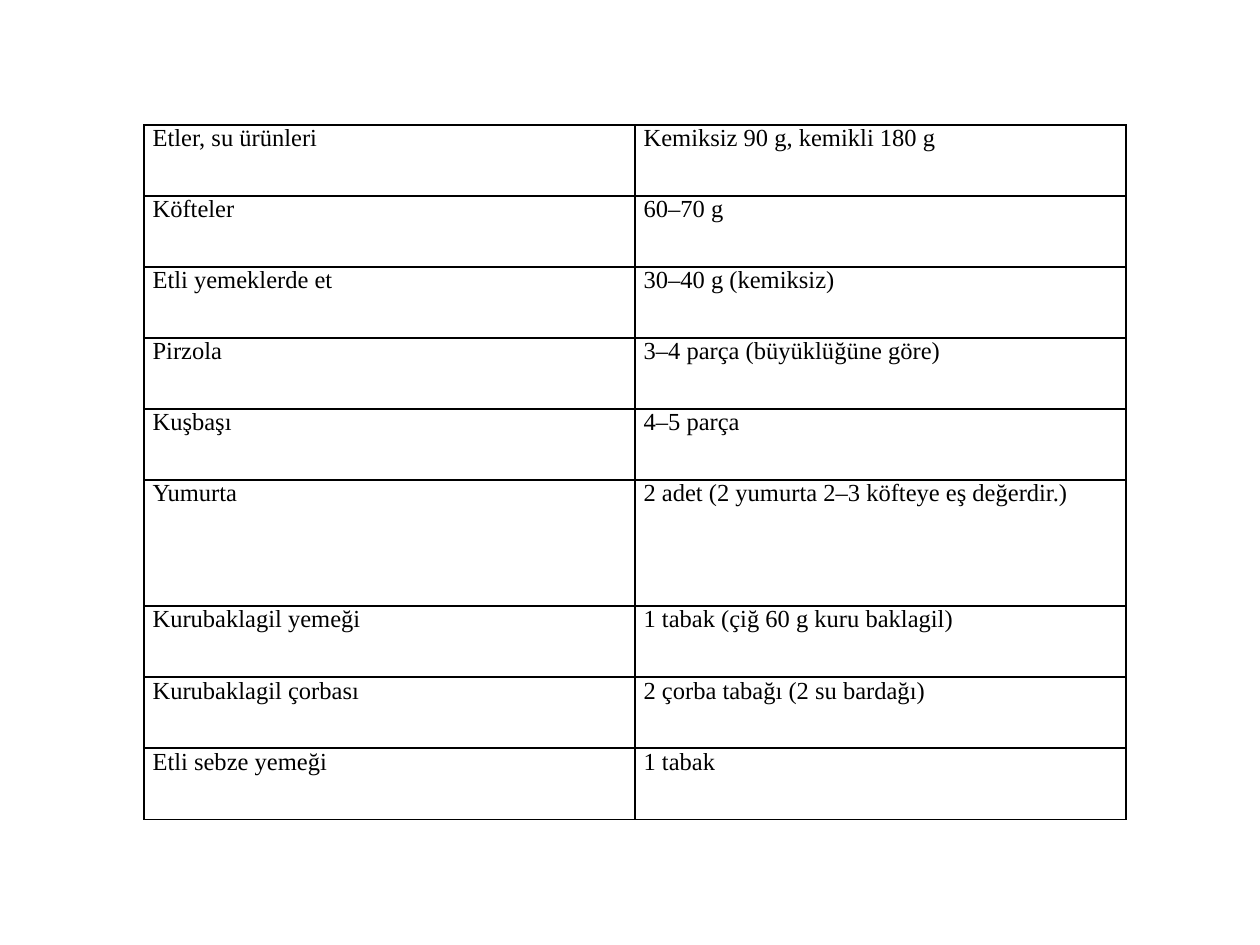
import pptx
import pptx.dml.color
import pptx.oxml
import pptx.oxml.ns
import pptx.util

Pt = pptx.util.Pt
BLACK = pptx.dml.color.RGBColor(0, 0, 0)
FONT_NAME = "Times New Roman"
COLUMN_WIDTH = Pt(280.6)
ROW_HEIGHT = Pt(40.6)
EGG_ROW_HEIGHT = Pt(72)
EGG_ROW = 5
PORTIONS = [
    ("Etler, su ürünleri", "Kemiksiz 90 g, kemikli 180 g"),
    ("Köfteler", "60–70 g"),
    ("Etli yemeklerde et", "30–40 g (kemiksiz)"),
    ("Pirzola", "3–4 parça (büyüklüğüne göre)"),
    ("Kuşbaşı", "4–5 parça"),
    ("Yumurta", "2 adet (2 yumurta 2–3 köfteye eş değerdir.)"),
    ("Kurubaklagil yemeği", "1 tabak (çiğ 60 g kuru baklagil)"),
    ("Kurubaklagil çorbası", "2 çorba tabağı (2 su bardağı)"),
    ("Etli sebze yemeği", "1 tabak"),
]


def add_borders(cell):
    properties = cell._tc.get_or_add_tcPr()
    for side in ("lnL", "lnR", "lnT", "lnB"):
        properties.append(pptx.oxml.parse_xml(
            f'<a:{side} {pptx.oxml.ns.nsdecls("a")} w="{Pt(1)}">'
            f'<a:solidFill><a:srgbClr val="{BLACK}"/></a:solidFill></a:{side}>'
        ))


def fill_cell(cell, text):
    add_borders(cell)
    cell.fill.background()
    cell.margin_left = Pt(5)
    cell.margin_right = cell.margin_top = cell.margin_bottom = 0
    cell.text = text
    paragraph = cell.text_frame.paragraphs[0]
    paragraph.space_before = Pt(1.4)
    paragraph.font.name = FONT_NAME
    paragraph.font.size = Pt(14)
    paragraph.font.color.rgb = BLACK


def add_portion_table(slide):
    height = ROW_HEIGHT * (len(PORTIONS) - 1) + EGG_ROW_HEIGHT
    table = slide.shapes.add_table(
        len(PORTIONS), 2, Pt(82.2), Pt(71.4), COLUMN_WIDTH * 2, height
    ).table
    table.first_row = False
    table.horz_banding = False
    for column in table.columns:
        column.width = COLUMN_WIDTH
    for index, portion in enumerate(PORTIONS):
        table.rows[index].height = EGG_ROW_HEIGHT if index == EGG_ROW else ROW_HEIGHT
        for cell, text in zip(table.rows[index].cells, portion):
            fill_cell(cell, text)
    table.cell(EGG_ROW, 0).text_frame.paragraphs[0].space_before = Pt(7.7)


def main():
    presentation = pptx.Presentation()
    presentation.slide_width = Pt(720)
    presentation.slide_height = Pt(540)
    slide = presentation.slides.add_slide(presentation.slide_layouts[6])
    add_portion_table(slide)
    presentation.save("out.pptx")


if __name__ == "__main__":
    main()
